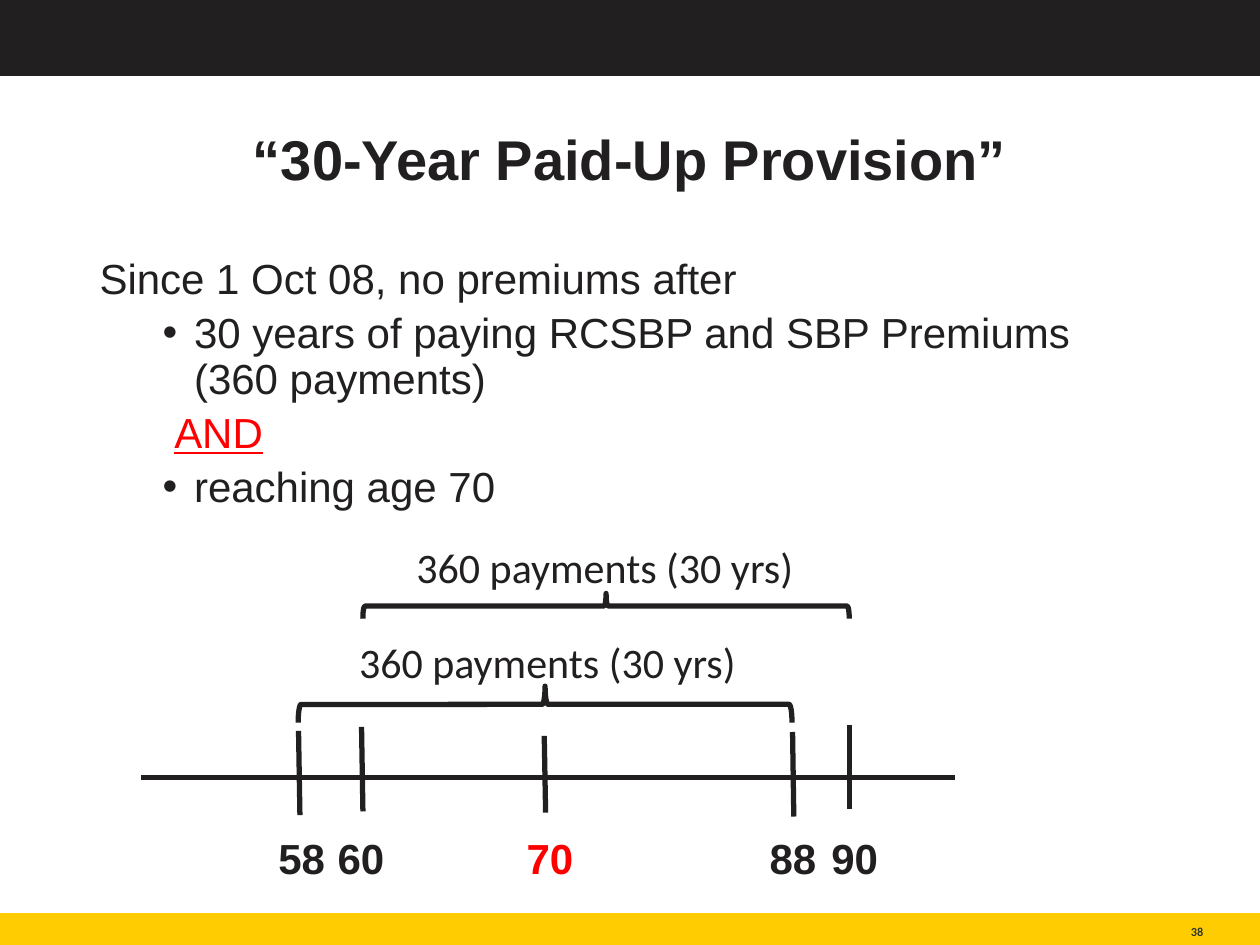
from lxml import etree
from pptx import Presentation, util as u
from pptx.dml.color import RGBColor
from pptx.enum import shapes, text
from pptx.oxml import ns

DARK, YELLOW, RED, GREY = "221F20", "FFCC01", "FF0000", "2F372F"
LABEL = {"size": 24, "name": "Arial", "bold": True}
BODY = {"size": 24, "name": "Arial", "bold": False}
SPAN = {"size": 24, "name": "Calibri", "bold": False}

# age, label left, tick x at top and bottom, tick top and bottom
AGES = [
    (58, 152, 170.6, 171.4, 417.6, 465.8),
    (60, 185.8, 206.6, 207.4, 415.4, 463.7),
    (70, 293.8, 311, 311.8, 420.5, 464.4),
    (88, 432.7, 452.9, 453.6, 418.3, 466.6),
    (90, 468, 485.3, 485.3, 414, 462.2),
]

# label box, brace box before its quarter turn
PAYMENTS = [
    ((216.7, 306, 257.8, 36), (339.1, 207.4, 14.4, 277.9)),
    ((185, 360, 255.6, 36), (301, 261.4, 20.9, 282.2)),
]

# text, left margin, first-line indent, bullet, colour, underline
LIST = [
    ("Since 1 Oct 08, no premiums after", 0, 0, False, DARK, False),
    ("30 years of paying RCSBP and SBP Premiums (360 payments)",
     54, -18, True, DARK, False),
    ("AND", 42.7, 0, False, RED, True),
    ("reaching age 70", 54, -18, True, DARK, False),
]


def points(*values):
    return [u.Pt(value) for value in values]


def color(value):
    return RGBColor.from_string(value)


def place(shape, *box):
    shape.left, shape.top, shape.width, shape.height = points(*box)


def write(para, words, ink, style):
    span = para.add_run()
    span.text = words
    for name, value in style.items():
        setattr(span.font, name, u.Pt(value) if name == "size" else value)
    span.font.color.rgb = color(ink)


def draw_line(shape, width):
    shape.line.color.rgb = color(DARK)
    shape.line.width = u.Pt(width)


def add_bar(page, ink, *box):
    bar = page.shapes.add_shape(shapes.MSO_SHAPE.RECTANGLE, *points(*box))
    bar.shadow.inherit = False
    bar.fill.solid()
    bar.fill.fore_color.rgb = color(ink)
    bar.line.color.rgb = color(ink)
    bar.line.width = u.Pt(1)


def add_label(page, words, ink, style, box, align=text.PP_ALIGN.LEFT,
              wrap=False):
    label = page.shapes.add_textbox(*points(*box))
    label.text_frame.word_wrap = wrap
    para = label.text_frame.paragraphs[0]
    para.alignment = align
    write(para, words, ink, style)
    return label


def add_line(page, *ends):
    line = page.shapes.add_connector(shapes.MSO_CONNECTOR.STRAIGHT,
                                     *points(*ends))
    draw_line(line, 3)
    etree.SubElement(line._element.spPr, ns.qn("a:effectLst"))


def add_brace(page, *box):
    brace = page.shapes.add_shape(shapes.MSO_SHAPE.LEFT_BRACE, *points(*box))
    brace.rotation = 90
    brace.adjustments[0] = 0.08
    brace.shadow.inherit = False
    brace.fill.background()
    draw_line(brace, 3)


def fill_title(title):
    place(title, 49.7, 53.3, 620.6, 79.2)
    frame = title.text_frame
    frame.auto_size = text.MSO_AUTO_SIZE.NONE
    frame.vertical_anchor = text.MSO_ANCHOR.MIDDLE
    para = frame.paragraphs[0]
    para.alignment = text.PP_ALIGN.CENTER
    para.line_spacing = 0.9
    write(para, "“30-Year Paid-Up Provision”", DARK, {**LABEL, "size": 32})


def set_bullet(para, margin, indent, bullet):
    props = para._p.get_or_add_pPr()
    props.set("marL", str(u.Pt(margin)))
    props.set("indent", str(u.Pt(indent)))
    if bullet:
        font = etree.SubElement(props, ns.qn("a:buFont"))
        font.set("typeface", "Arial")
        etree.SubElement(props, ns.qn("a:buChar")).set("char", "•")
    else:
        etree.SubElement(props, ns.qn("a:buNone"))


def fill_list(body):
    place(body, 49.7, 144, 620.6, 342.7)
    frame = body.text_frame
    frame.auto_size = text.MSO_AUTO_SIZE.NONE
    for row, (words, margin, indent, bullet, ink, line) in enumerate(LIST):
        para = frame.add_paragraph() if row else frame.paragraphs[0]
        para.level = 1 if row else 0
        set_bullet(para, margin, indent, bullet)
        para.line_spacing = 0.9
        para.space_before = u.Pt(5 if row else 0)
        write(para, words, ink, {**BODY, "underline": line})


def add_page_number(page):
    number = add_label(page, "38", GREY, {**SPAN, "size": 7, "bold": True},
                       (625, 522, 62.6, 14.4), text.PP_ALIGN.RIGHT, True)
    frame = number.text_frame
    frame.vertical_anchor = text.MSO_ANCHOR.BOTTOM
    for side in ("left", "right", "top", "bottom"):
        setattr(frame, f"margin_{side}", 0)


def add_timeline(page):
    for label_box, brace_box in PAYMENTS:
        add_brace(page, *brace_box)
        add_label(page, "360 payments (30 yrs)", DARK, SPAN, label_box,
                  text.PP_ALIGN.CENTER)
    add_line(page, 80.6, 444.2, 545.8, 444.2)
    for age, left, x_top, x_bottom, top, bottom in AGES:
        add_line(page, x_top, top, x_bottom, bottom)
        add_label(page, str(age), RED if age == 70 else DARK, LABEL,
                  (left, 472.3, 41.8, 36))


def main():
    deck = Presentation()
    deck.slide_width, deck.slide_height = points(720, 540)
    page = deck.slides.add_slide(deck.slide_layouts[1])

    # Page frame
    add_bar(page, DARK, 0, 0.7, 720, 42.5)
    add_bar(page, YELLOW, 0, 522, 720, 18)
    add_page_number(page)

    # Title and list
    fill_title(page.shapes.title)
    fill_list(page.placeholders[1])

    # Ages and payment spans
    add_timeline(page)
    deck.save("out.pptx")


if __name__ == "__main__":
    main()
